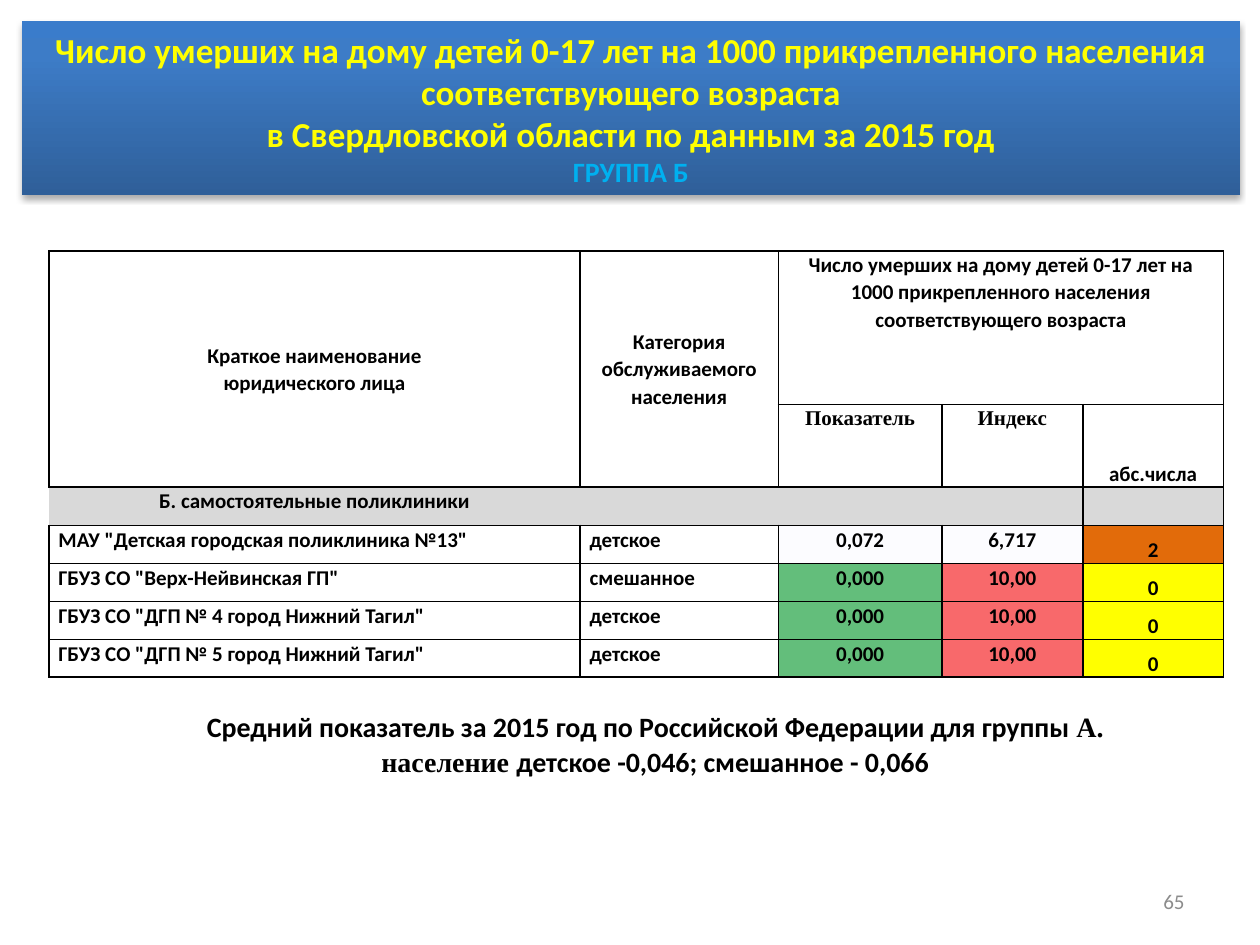
import pptx
import pptx.dml.color
import pptx.enum.shapes
import pptx.enum.text
import pptx.oxml
import pptx.oxml.ns
import pptx.util

Pt = pptx.util.Pt
ALIGN = pptx.enum.text.PP_ALIGN
ANCHOR = pptx.enum.text.MSO_ANCHOR
NS = pptx.oxml.ns.nsdecls("a")
SANS, SERIF = "Calibri", "Times New Roman"
COLORS = {
    "black": "000000", "title": "FFFF00", "group": "00B0F0", "number": "8C8C8C",
    "section": "D9D9D9", "neutral": "FCFCFF", "good": "63BE7B", "bad": "F8696B",
    "orange": "E26B0A", "yellow": "FFFF00",
    "banner_low": "2F5F99", "banner_mid": "3D7CC7", "banner_top": "3A7CCB",
}


def add_run(paragraph, text, size=12, color="black", font=SANS, bold=True):
    run = paragraph.add_run()
    run.text = text
    run.font.name, run.font.size, run.font.bold = font, Pt(size), bold
    run.font.color.rgb = pptx.dml.color.RGBColor.from_string(COLORS[color])


def fill_cell(cell, lines, align=ALIGN.CENTER, anchor=ANCHOR.TOP, fill=None,
              font=SANS, sides="LRTB"):
    """Write one paragraph per line, draw the named borders, then set the fill."""
    cell.margin_left = cell.margin_right = Pt(5.4)
    cell.margin_top = cell.margin_bottom = 0
    cell.vertical_anchor = anchor
    for i, line in enumerate(lines):
        paragraph = cell.text_frame.add_paragraph() if i else cell.text_frame.paragraphs[0]
        paragraph.alignment, paragraph.line_spacing = align, 1.07
        add_run(paragraph, line, font=font)
    properties = cell._tc.get_or_add_tcPr()
    for side in sides:
        properties.append(pptx.oxml.parse_xml(
            f'<a:ln{side} {NS} w="12700"><a:solidFill><a:srgbClr val="{COLORS["black"]}"/>'
            f'</a:solidFill></a:ln{side}>'))
    if fill:
        cell.fill.solid()
        cell.fill.fore_color.rgb = pptx.dml.color.RGBColor.from_string(COLORS[fill])
    else:
        cell.fill.background()


deck = pptx.Presentation()
deck.slide_width, deck.slide_height = Pt(720), Pt(540)
slide = deck.slides.add_slide(deck.slide_layouts[6])

# Title banner
banner = slide.shapes.add_shape(pptx.enum.shapes.MSO_SHAPE.RECTANGLE,
                                Pt(12.5), Pt(12), Pt(696), Pt(99.5))
banner.line.fill.background()
banner.fill.gradient()
banner.fill.gradient_angle = 90
stops = banner._element.spPr.find(".//" + pptx.oxml.ns.qn("a:gsLst"))
for stop in list(stops):
    stops.remove(stop)
for position, color in ((0, "banner_low"), (80, "banner_mid"), (100, "banner_top")):
    stops.append(pptx.oxml.parse_xml(
        f'<a:gs {NS} pos="{position * 1000}"><a:srgbClr val="{COLORS[color]}"/></a:gs>'))
banner._element.spPr.append(pptx.oxml.parse_xml(
    f'<a:effectLst {NS}><a:outerShdw blurRad="{Pt(3.5)}" dist="{Pt(2.2)}" dir="5400000" '
    f'rotWithShape="0"><a:srgbClr val="{COLORS["black"]}"><a:alpha val="32000"/></a:srgbClr>'
    '</a:outerShdw></a:effectLst>'))
banner.text_frame.word_wrap = True
banner.text_frame.vertical_anchor = ANCHOR.MIDDLE
title = banner.text_frame.paragraphs[0]
title.alignment = ALIGN.CENTER
for text in ("Число умерших на дому детей 0-17 лет на 1000 прикрепленного населения "
             "соответствующего возраста",
             "в Свердловской области по данным за 2015 год"):
    add_run(title, text, 20, "title")
    title.add_line_break()
add_run(title, "ГРУППА Б", 16, "group")

# Table of clinics
column_widths = [303.5, 113.3, 93.5, 80.5, 80.5]
row_heights = [88, 46.5] + [21.7] * 5
frame = slide.shapes.add_table(len(row_heights), len(column_widths), Pt(28), Pt(143.3),
                               Pt(sum(column_widths)), Pt(sum(row_heights)))
clinics = frame.table
clinics.first_row = clinics.horz_banding = False
# "No style, no grid" table style
clinics._tbl.tblPr.find(pptx.oxml.ns.qn("a:tableStyleId")).text = \
    "{2D5ABB26-0587-4C30-8999-92F81FD0307C}"
for column, width in zip(clinics.columns, column_widths):
    column.width = Pt(width)
for row, height in zip(clinics.rows, row_heights):
    row.height = Pt(height)

clinics.cell(0, 0).merge(clinics.cell(1, 0))
clinics.cell(0, 1).merge(clinics.cell(1, 1))
clinics.cell(0, 2).merge(clinics.cell(0, 4))
headers = [
    (0, 0, ["Краткое наименование", "юридического лица"], ANCHOR.MIDDLE, SANS),
    (0, 1, ["Категория обслуживаемого населения"], ANCHOR.MIDDLE, SANS),
    (0, 2, ["Число умерших на дому детей 0-17 лет на 1000 прикрепленного населения "
            "соответствующего возраста"], ANCHOR.TOP, SANS),
    (0, 3, [], ANCHOR.TOP, SANS),
    (0, 4, [], ANCHOR.TOP, SANS),
    (1, 0, [], ANCHOR.TOP, SANS),
    (1, 1, [], ANCHOR.TOP, SANS),
    (1, 2, ["Показатель"], ANCHOR.TOP, SERIF),
    (1, 3, ["Индекс"], ANCHOR.TOP, SERIF),
    (1, 4, ["абс.числа"], ANCHOR.BOTTOM, SANS),
]
for r, c, lines, anchor, font in headers:
    fill_cell(clinics.cell(r, c), lines, anchor=anchor, font=font)

section_sides = ["TB", "TB", "TB", "RTB", "LRTB"]
for c, sides in enumerate(section_sides):
    fill_cell(clinics.cell(2, c), [] if c else ["Б. самостоятельные поликлиники"],
              fill="section", sides=sides)

outlier = ("neutral", "neutral", "orange")
regular = ("good", "bad", "yellow")
records = [
    (('МАУ "Детская городская поликлиника №13"', "детское", "0,072", "6,717", "2"), outlier),
    (('ГБУЗ СО "Верх-Нейвинская ГП"', "смешанное", "0,000", "10,00", "0"), regular),
    (('ГБУЗ СО "ДГП № 4 город Нижний Тагил"', "детское", "0,000", "10,00", "0"), regular),
    (('ГБУЗ СО "ДГП № 5 город Нижний Тагил"', "детское", "0,000", "10,00", "0"), regular),
]
for r, (values, fills) in enumerate(records, start=3):
    for c, (value, fill) in enumerate(zip(values, (None, None) + fills)):
        fill_cell(clinics.cell(r, c), [value], ALIGN.LEFT if c < 2 else ALIGN.CENTER,
                  ANCHOR.BOTTOM if c == 4 else ANCHOR.TOP, fill)

# National average
average = slide.shapes.add_textbox(Pt(36.7), Pt(400.3), Pt(675.4), Pt(49)).text_frame
average.word_wrap = True
group_line, values_line = average.paragraphs[0], average.add_paragraph()
for line in (group_line, values_line):
    line.alignment, line.line_spacing = ALIGN.CENTER, 1.07
add_run(group_line, "Средний показатель за 2015 год по Российской Федерации для группы ", 16)
add_run(group_line, "А.", 16, font=SERIF)
add_run(values_line, "население ", 16, font=SERIF)
add_run(values_line, "детское -0,046; смешанное - 0,066", 16)

# Page number
page = slide.shapes.add_textbox(Pt(516), Pt(500.5), Pt(168), Pt(28.8)).text_frame
page.word_wrap = True
page.vertical_anchor = ANCHOR.MIDDLE
page.paragraphs[0].alignment = ALIGN.RIGHT
add_run(page.paragraphs[0], "65", 12, "number", bold=False)

deck.save("out.pptx")
